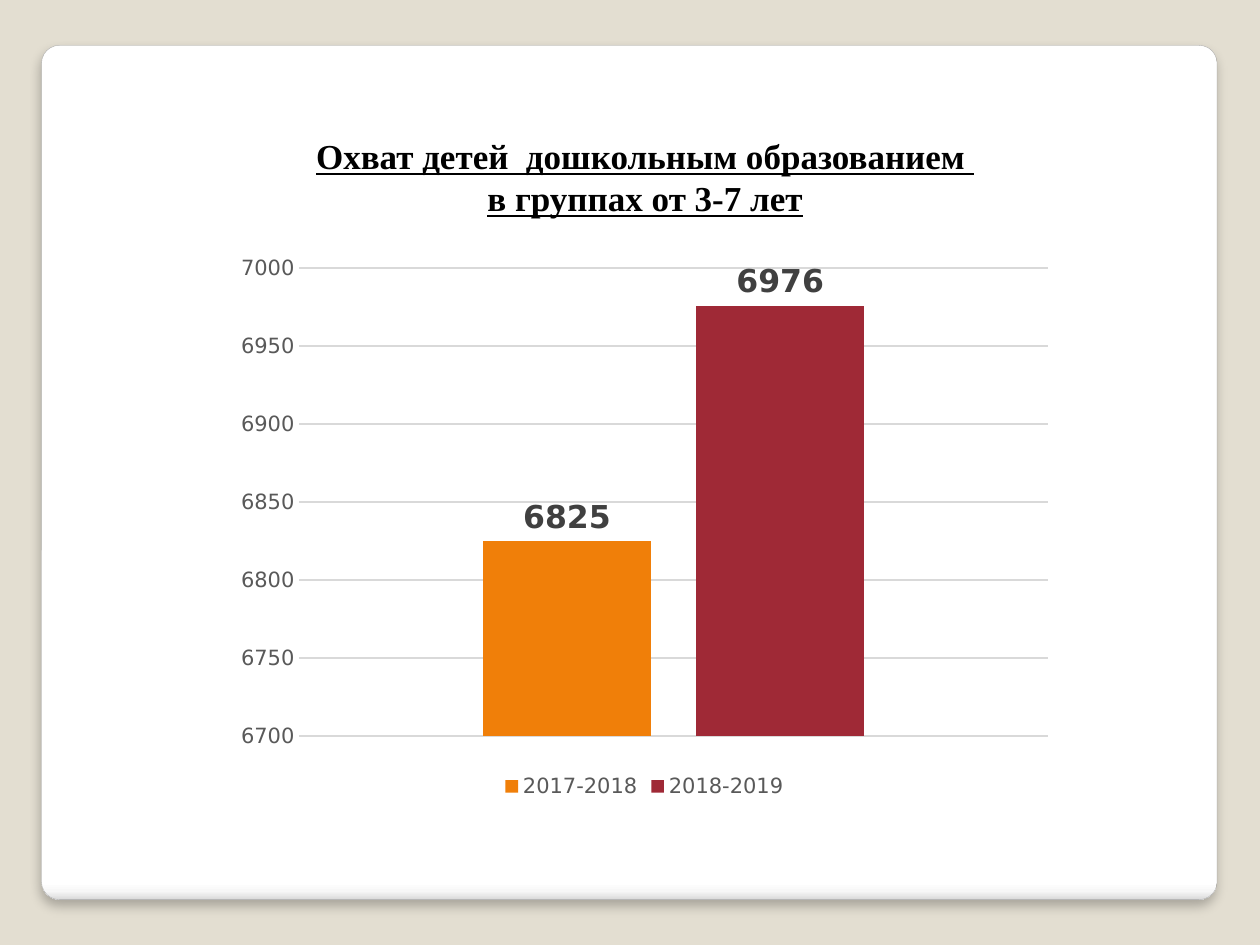
from lxml import etree
from pptx import Presentation
from pptx import util as u
from pptx.chart.data import CategoryChartData
from pptx.dml.color import RGBColor
from pptx.enum import chart as charts, shapes, text
from pptx.oxml.ns import qn

SANS = "DejaVu Sans"
SERIF = "Times New Roman"


def rgb(value):
    return RGBColor.from_string(value)


def format_font(font, name, size, color, bold=False, underline=False):
    font.name = name
    font.size = u.Pt(size)
    font.color.rgb = rgb(color)
    font.bold = bold
    font.underline = underline


def write_text(frame, lines, align=text.PP_ALIGN.CENTER, **font_format):
    """Fill the frame with one paragraph per line, all in the same format."""
    for index, line in enumerate(lines):
        paragraph = frame.paragraphs[0] if index == 0 else frame.add_paragraph()
        paragraph.alignment = align
        run = paragraph.add_run()
        run.text = line
        format_font(run.font, **font_format)


def add_color(parent, value, alpha=None):
    color = etree.SubElement(parent, qn("a:srgbClr"), val=value)
    if alpha is not None:
        etree.SubElement(color, qn("a:alpha"), val=str(alpha * 1000))


def place(shape, left, top, width, height):
    shape.left, shape.top = u.Inches(left), u.Inches(top)
    shape.width, shape.height = u.Inches(width), u.Inches(height)


class EnrolmentSlide:
    background = "E3DED1"
    card_stops = [(0, "FFFFFF"), (98, "FFFFFF"), (99, "F7F7F7"), (100, "DADADA")]
    card_border = "A4A4A4"
    heading_color = "000000"
    axis_color = "595959"
    label_color = "404040"
    grid_color = "D9D9D9"

    def __init__(self, presentation):
        self.slide = presentation.slides.add_slide(presentation.slide_layouts[5])
        self.slide.background.fill.solid()
        self.slide.background.fill.fore_color.rgb = rgb(self.background)

    def card(self, left, top, width, height):
        """Add the rounded panel behind everything else."""
        panel = self.slide.shapes.add_shape(
            shapes.MSO_SHAPE.ROUNDED_RECTANGLE, *map(u.Inches, (left, top, width, height)))
        panel.adjustments[0] = 0.021
        panel.line.color.rgb = rgb(self.card_border)
        panel.line.width = u.Pt(0.16)

        panel.fill.gradient()
        panel.fill.gradient_angle = 270
        properties = panel.element.spPr
        stops = properties.find(".//" + qn("a:gsLst"))
        stops.clear()
        for position, color in self.card_stops:
            add_color(etree.SubElement(stops, qn("a:gs"), pos=str(position * 1000)), color)

        panel.shadow.inherit = False
        shadow = etree.SubElement(
            properties.find(qn("a:effectLst")), qn("a:outerShdw"),
            blurRad=str(u.Pt(6)), dist=str(u.Pt(4)), dir="5400000", rotWithShape="0")
        add_color(shadow, "000000", alpha=25)
        self.slide.shapes.element.insert(2, panel.element)

    def heading(self, lines, *box):
        title = self.slide.shapes.title
        place(title, *box)
        frame = title.text_frame
        frame.word_wrap = True
        frame.auto_size = text.MSO_AUTO_SIZE.SHAPE_TO_FIT_TEXT
        frame.vertical_anchor = text.MSO_ANCHOR.TOP
        write_text(frame, lines, name=SERIF, size=20, color=self.heading_color,
                   bold=True, underline=True)

    def column_chart(self, category, columns, scale, left, top, width, height):
        """Draw columns given as (name, value, color); scale is (low, high, step)."""
        data = CategoryChartData()
        data.categories = [category]
        for name, value, _ in columns:
            data.add_series(name, [value])
        chart = self.slide.shapes.add_chart(
            charts.XL_CHART_TYPE.COLUMN_CLUSTERED,
            *map(u.Inches, (left, top, width, height)), data).chart
        chart.has_title = False
        format_font(chart.font, SANS, 10, "000000")

        chart.has_legend = True
        chart.legend.position = charts.XL_LEGEND_POSITION.BOTTOM
        chart.legend.include_in_layout = False
        format_font(chart.legend.font, SANS, 12, self.axis_color)

        chart.category_axis.visible = False
        axis = chart.value_axis
        axis.minimum_scale, axis.maximum_scale, axis.major_unit = scale
        axis.major_tick_mark = charts.XL_TICK_MARK.NONE
        axis.format.line.fill.background()
        axis.major_gridlines.format.line.color.rgb = rgb(self.grid_color)
        axis.major_gridlines.format.line.width = u.Pt(0.75)
        format_font(axis.tick_labels.font, SANS, 12, self.axis_color)

        plot = chart.plots[0]
        plot.vary_by_categories = False
        plot.gap_width = 219
        plot.overlap = -27
        for series, (_, _, color) in zip(plot.series, columns):
            series.format.fill.solid()
            series.format.fill.fore_color.rgb = rgb(color)
            labels = series.data_labels
            labels.show_value = True
            labels.position = charts.XL_LABEL_POSITION.OUTSIDE_END
            format_font(labels.font, SANS, 18, self.label_color, bold=True)


def main():
    presentation = Presentation()
    presentation.slide_width = u.Inches(10)
    presentation.slide_height = u.Inches(7.5)

    enrolment = EnrolmentSlide(presentation)
    enrolment.card(0.33, 0.36, 9.33, 6.78)
    enrolment.heading(["Охват детей  дошкольным образованием ", "в группах от 3-7 лет"],
                      1.41, 1.02, 7.42, 0.77)
    enrolment.column_chart(
        "1", [("2017-2018", 6825, "F07F09"), ("2018-2019", 6976, "9F2936")],
        (6700, 7000, 50), 1.78, 1.94, 6.67, 4.44)
    presentation.save("out.pptx")


if __name__ == "__main__":
    main()
